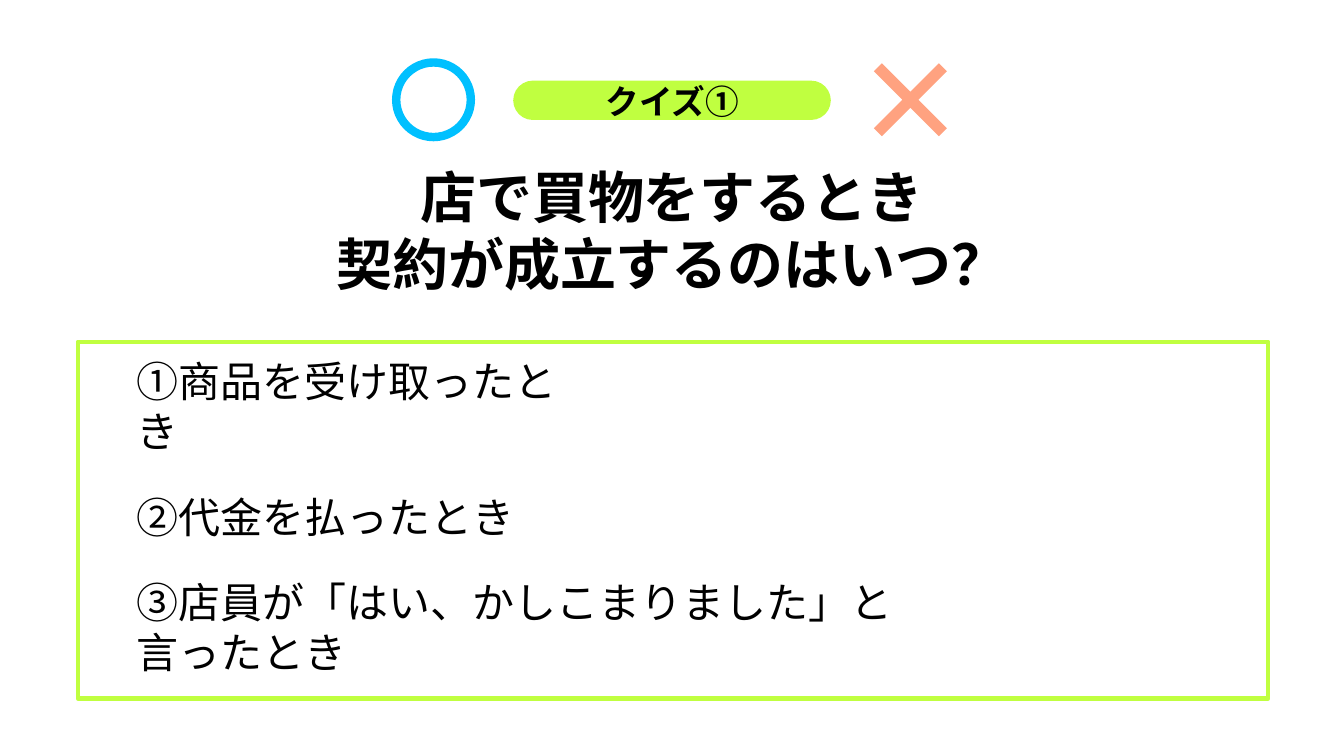
from lxml.etree import SubElement
from pptx import Presentation
from pptx.dml.color import RGBColor
from pptx.enum.shapes import MSO_SHAPE
from pptx.enum.text import MSO_ANCHOR, MSO_AUTO_SIZE, PP_ALIGN
from pptx.oxml.ns import qn
from pptx.util import Inches, Pt

COLORS = {
    "text": "000000",
    "lime": "C0FF40",
    "blue": "00C0FF",
    "salmon": "FFA280",
}
FONT = "Noto Sans CJK JP"


class QuizSlide:
    def __init__(self, presentation):
        self.slide = presentation.slides.add_slide(presentation.slide_layouts[5])

    def color(self, name):
        return RGBColor.from_string(COLORS[name])

    def set_lines(self, frame, lines, size, bold=False, align=PP_ALIGN.LEFT, after=0):
        frame.word_wrap = True
        frame.vertical_anchor = MSO_ANCHOR.MIDDLE
        frame.text = "\n".join(lines)
        for paragraph in frame.paragraphs:
            paragraph.alignment = align
            paragraph.space_after = Pt(after)
            font = paragraph.font
            font.name = FONT
            font.size = Pt(size)
            font.bold = bold
            font.color.rgb = self.color("text")
            properties = paragraph._p.pPr.find(qn("a:defRPr"))
            SubElement(properties, qn("a:ea"), typeface=FONT)

    def heading(self, frame, lines, size):
        frame.auto_size = MSO_AUTO_SIZE.NONE
        frame.margin_left = frame.margin_right = 0
        frame.margin_top = frame.margin_bottom = 0
        self.set_lines(frame, lines, size, bold=True, align=PP_ALIGN.CENTER)

    def title(self, box, lines):
        title = self.slide.shapes.title
        title.left, title.top, title.width, title.height = map(Inches, box)
        self.heading(title.text_frame, lines, 40)

    def label(self, box, text):
        label = self.slide.shapes.add_textbox(*map(Inches, box))
        self.heading(label.text_frame, [text], 24)

    def answer(self, box, text):
        answer = self.slide.shapes.add_textbox(*map(Inches, box))
        answer.text_frame.auto_size = MSO_AUTO_SIZE.SHAPE_TO_FIT_TEXT
        self.set_lines(answer.text_frame, [text], 30, after=6)

    def shape(self, kind, box, fill=None, line=None, width=0, adjustment=None):
        shape = self.slide.shapes.add_shape(kind, *map(Inches, box))
        shape.shadow.inherit = False
        if adjustment is not None:
            shape.adjustments[0] = adjustment
        if fill:
            shape.fill.solid()
            shape.fill.fore_color.rgb = self.color(fill)
        else:
            shape.fill.background()
        if line:
            shape.line.color.rgb = self.color(line)
            shape.line.width = Pt(width)
        else:
            shape.line.fill.background()


def main():
    presentation = Presentation()
    presentation.slide_width = Inches(13.33)
    presentation.slide_height = Inches(7.5)
    quiz = QuizSlide(presentation)

    quiz.title((0.76, 1.49, 11.81, 1.57), ["店で買物をするとき", "契約が成立するのはいつ？"])
    quiz.shape(MSO_SHAPE.RECTANGLE, (0.77, 3.39, 11.81, 3.54), line="lime", width=3)
    answers = [
        (3.83, 4.72, 0.39, "①商品を受け取ったとき"),
        (4.82, 4.72, 0.61, "②代金を払ったとき"),
        (6.02, 7.87, 0.39, "③店員が「はい、かしこまりました」と言ったとき"),
    ]
    for top, width, height, text in answers:
        quiz.answer((1.26, top, width, height), text)

    quiz.shape(MSO_SHAPE.ROUNDED_RECTANGLE, (5.09, 0.8, 3.15, 0.39), fill="lime", adjustment=0.5)
    quiz.label((4.7, 0.85, 3.94, 0.3), "クイズ①")
    quiz.shape(MSO_SHAPE.OVAL, (3.93, 0.62, 0.74, 0.74), line="blue", width=6)
    quiz.shape(MSO_SHAPE.MATH_MULTIPLY, (8.41, 0.37, 1.24, 1.24), fill="salmon", adjustment=0.09)

    presentation.save("out.pptx")


if __name__ == "__main__":
    main()
